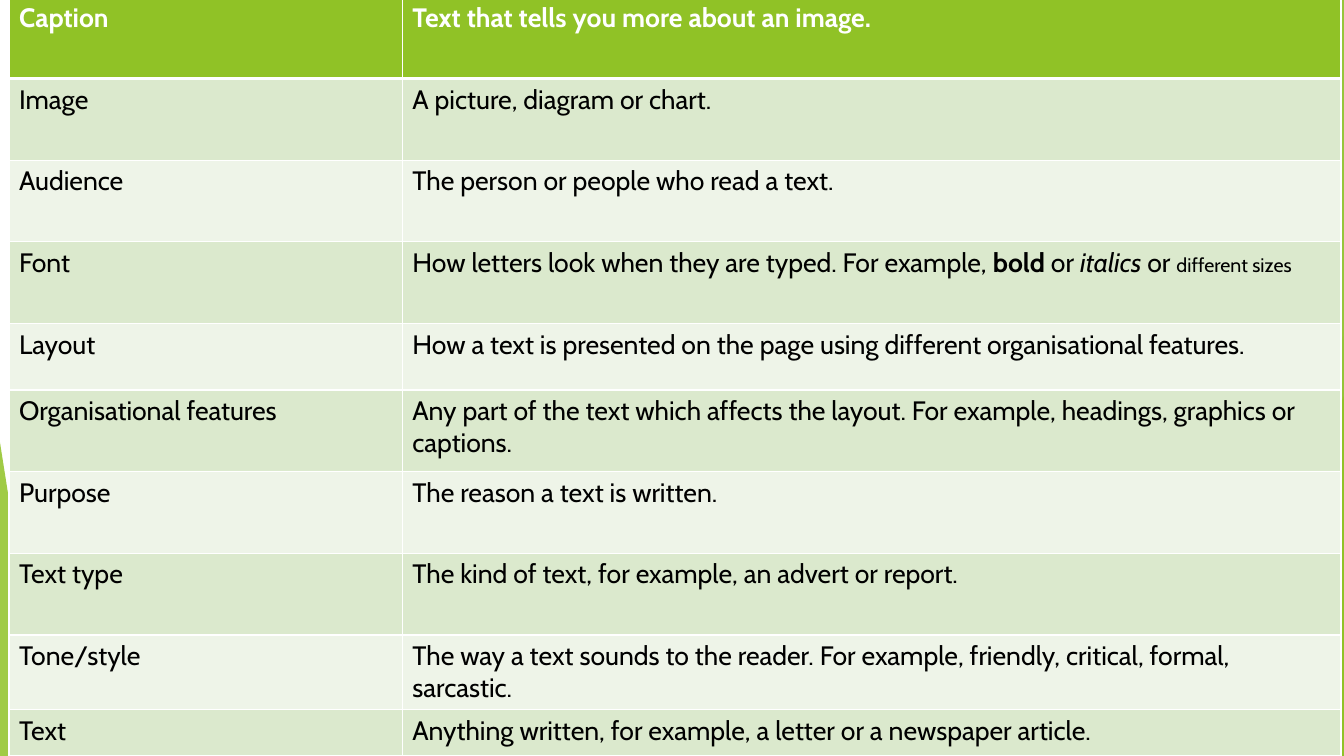
from lxml.etree import SubElement
from pptx import Presentation
from pptx.dml.color import RGBColor
from pptx.enum.shapes import MSO_CONNECTOR, MSO_SHAPE
from pptx.oxml.ns import qn
from pptx.util import Emu, Inches, Pt

WIDTH, HEIGHT = 13.33, 7.5
FONT = "Cabin"
GREEN = "90C226"
BANDS = ("EEF4E8", "DBE9CD")
TABLE_LEFT, TABLE_TOP = 0.09, -0.03
COLUMN_WIDTHS = (3.9, 9.31)
ROW_HEIGHT = 0.81
SHORT_ROWS = {"Layout": 0.66, "Tone/style": 0.74, "Text": 0.46}

GLOSSARY = [
    ("Caption", "Text that tells you more about an image."),
    ("Image", "A picture, diagram or chart."),
    ("Audience", "The person or people who read a text."),
    ("Font", [
        ("How letters look when they are typed. For example, ", {}),
        ("bold", {"bold": True}),
        (" or ", {}),
        ("italics", {"italic": True}),
        (" or ", {}),
        ("different sizes", {"size": Pt(14)}),
    ]),
    ("Layout", "How a text is presented on the page using different organisational features."),
    ("Organisational features", "Any part of the text which affects the layout. "
     "For example, headings, graphics or captions."),
    ("Purpose", "The reason a text is written."),
    ("Text type", "The kind of text, for example, an advert or report."),
    ("Tone/style", "The way a text sounds to the reader. "
     "For example, friendly, critical, formal, sarcastic."),
    ("Text", "Anything written, for example, a letter or a newspaper article."),
]

RAYS = [
    ((10.25, 0), (11.58, HEIGHT), "BFBFBF"),
    ((WIDTH, 4.03), (8.12, HEIGHT), "D9D9D9"),
]
FACETS = [
    ("panel", 12.28, 10.04, GREEN, 30),
    ("panel", 10.5, 11.83, GREEN, 20),
    ("triangle", 9.77, 3.33, "54A021", 72),
    ("panel", 10.21, 12.91, "3F7819", 70),
    ("panel", 13.03, 11.92, "C0E474", 70),
    ("panel", 11.96, 13.18, GREEN, 65),
    ("triangle", 11.34, 3.93, GREEN, 80),
]
LEFT_TRIANGLE = (0.49, 4.39)


def color(value):
    return RGBColor.from_string(value)


def paint(shape, value, opacity):
    shape.shadow.inherit = False
    shape.line.fill.background()
    shape.fill.solid()
    shape.fill.fore_color.rgb = color(value)
    tint = shape.fill._xPr.find(qn("a:solidFill"))[0]
    SubElement(tint, qn("a:alpha"), val=str(opacity * 1000))


def add_ray(page, start, end, value):
    ends = [Inches(length) for length in start + end]
    ray = page.shapes.add_connector(MSO_CONNECTOR.STRAIGHT, *ends)
    ray.line.color.rgb = color(value)
    ray.line.width = Pt(0.75)
    SubElement(ray._element.spPr, qn("a:effectLst"))


def add_panel(page, top_x, bottom_x):
    top = -0.01
    corners = [(WIDTH, top), (WIDTH, HEIGHT), (bottom_x, HEIGHT)]
    builder = page.shapes.build_freeform(Inches(top_x), Inches(top))
    builder.add_line_segments([(Inches(x), Inches(y)) for x, y in corners], close=True)
    return builder.convert_to_shape()


def add_triangle(page, left, top, width, apex):
    triangle = page.shapes.add_shape(
        MSO_SHAPE.ISOSCELES_TRIANGLE, Inches(left), Inches(top),
        Inches(width), Inches(HEIGHT - top))
    triangle.adjustments[0] = apex
    return triangle


def add_borders(cell, bottom_width):
    properties = cell._tc.get_or_add_tcPr()
    for side, width in (("L", 1), ("R", 1), ("T", 1), ("B", bottom_width)):
        border = SubElement(properties, qn(f"a:ln{side}"), w=str(Pt(width)))
        fill = SubElement(border, qn("a:solidFill"))
        SubElement(fill, qn("a:srgbClr"), val="FFFFFF")


def fill_cell(cell, content, row):
    header = row == 0
    add_borders(cell, 3 if header else 1)
    cell.fill.solid()
    cell.fill.fore_color.rgb = color(GREEN if header else BANDS[row % 2])
    para = cell.text_frame.paragraphs[0]
    para.font.name = FONT
    para.font.size = Pt(19)
    para.font.bold = header
    para.font.color.rgb = color("FFFFFF" if header else "000000")
    spans = [(content, {})] if isinstance(content, str) else content
    for text, style in spans:
        span = para.add_run()
        span.text = text
        for name, value in style.items():
            setattr(span.font, name, value)


def add_glossary(page):
    heights = [Inches(SHORT_ROWS.get(term, ROW_HEIGHT)) for term, _ in GLOSSARY]
    widths = [Inches(width) for width in COLUMN_WIDTHS]
    table = page.shapes.add_table(
        len(heights), len(widths), Inches(TABLE_LEFT), Inches(TABLE_TOP),
        Emu(sum(widths)), Emu(sum(heights))).table
    for column, width in zip(table.columns, widths):
        column.width = width
    for index, (entry, height) in enumerate(zip(GLOSSARY, heights)):
        table.rows[index].height = height
        for cell, content in zip(table.rows[index].cells, entry):
            fill_cell(cell, content, index)


def main():
    deck = Presentation()
    deck.slide_width, deck.slide_height = Inches(WIDTH), Inches(HEIGHT)
    page = deck.slides.add_slide(deck.slide_layouts[6])
    for ray in RAYS:
        add_ray(page, *ray)
    for kind, first, second, value, opacity in FACETS:
        if kind == "panel":
            facet = add_panel(page, first, second)
        else:
            facet = add_triangle(page, first, second, WIDTH - first, 1)
        paint(facet, value, opacity)
    width, top = LEFT_TRIANGLE
    paint(add_triangle(page, 0, top, width, 0), GREEN, 85)
    add_glossary(page)
    deck.save("out.pptx")


if __name__ == "__main__":
    main()
